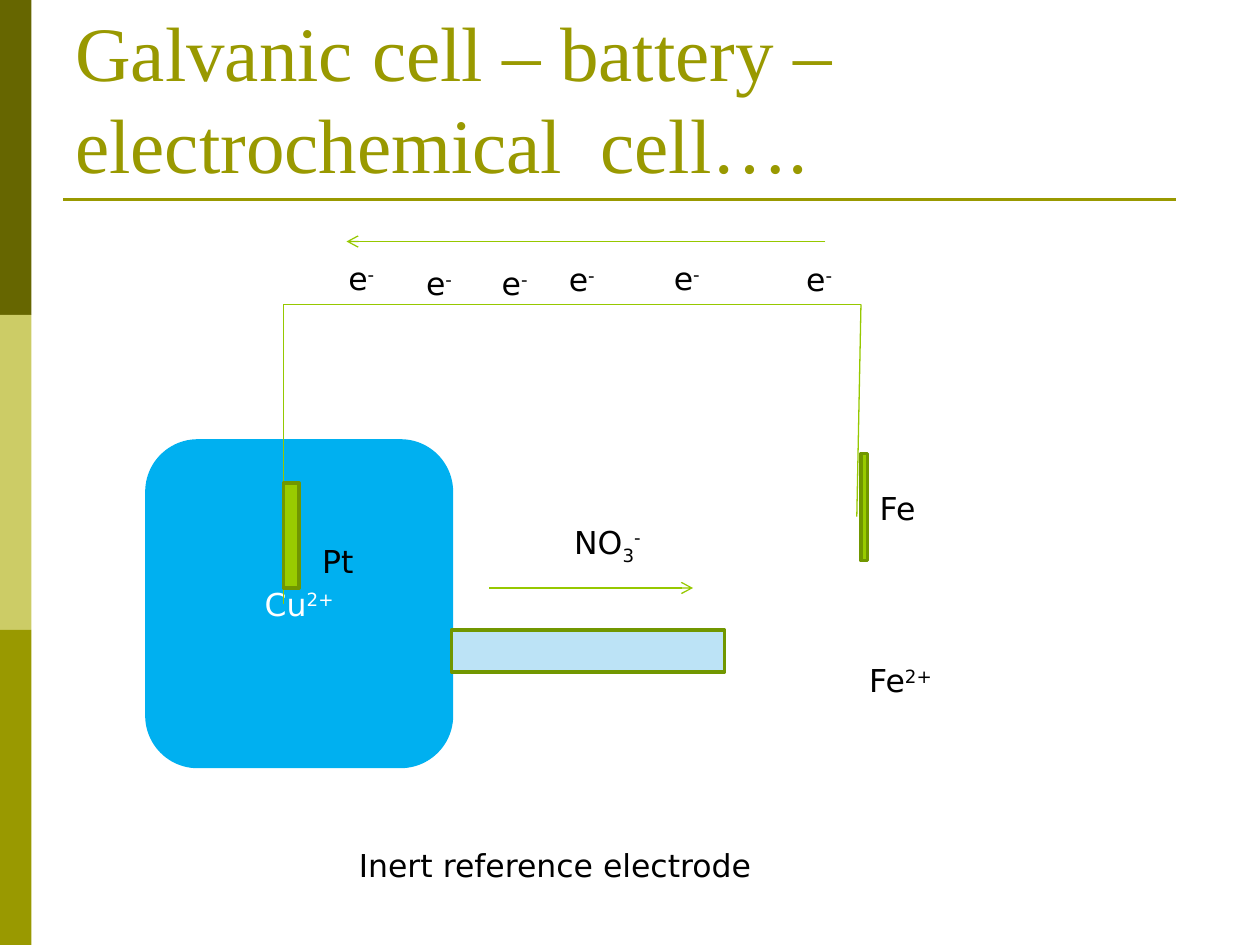
from itertools import pairwise

from lxml import etree
from pptx import Presentation
from pptx.dml.color import RGBColor
from pptx.enum.shapes import MSO_CONNECTOR, MSO_SHAPE
from pptx.enum.text import MSO_ANCHOR, MSO_AUTO_SIZE, PP_ALIGN
from pptx.oxml.ns import qn
from pptx.util import Inches, Pt

RECT, ROUNDED = MSO_SHAPE.RECTANGLE, MSO_SHAPE.ROUNDED_RECTANGLE
STRAIGHT = MSO_CONNECTOR.STRAIGHT
TOP, MIDDLE, BOTTOM = MSO_ANCHOR.TOP, MSO_ANCHOR.MIDDLE, MSO_ANCHOR.BOTTOM
GROW = MSO_AUTO_SIZE.SHAPE_TO_FIT_TEXT
LEFT, CENTER = PP_ALIGN.LEFT, PP_ALIGN.CENTER

WIDTH, HEIGHT = Inches(10), Inches(7.5)
COLUMNS = 120
CELL = WIDTH / COLUMNS
LABEL_ROWS = 4.8
BAND_COLUMNS, BAND_ROWS = 3, 30
SUPER, SUB = 30, -25
BODY_FONT, TITLE_FONT = "DejaVu Sans", "Times New Roman"

COLORS = {
    "dark olive": "666600", "pale olive": "CCCC66", "olive": "999900",
    "solution": "00B0F0", "bridge": "BCE3F6", "electrode": "99CC00",
    "outline": "719700", "wire": "96C800", "black": "000000", "white": "FFFFFF",
}

TITLE = [("Galvanic cell – battery – electrochemical  cell….", 0)]
TITLE_AREA = (6, 3.6, 108, 15)
TITLE_RULE = [(6, 19), (112, 19)]
BANDS = ["dark olive", "pale olive", "olive"]

BEAKER = (14, 42, 29, 31)
BEAKER_ION = [("Cu", 0), ("2+", SUPER)]
SALT_BRIDGE = (43, 60, 26, 4)
ELECTRODES = [(27, 46, 1.5, 10), (82, 43.2, 0.6, 10.2)]
CIRCUIT = [(27, 57.5), (27, 29), (82, 29), (81.6, 49.2)]
FLOW_ARROWS = [[(78.6, 23), (33, 23)], [(46.6, 56), (66, 56)]]

ELECTRON = [("e", 0), ("-", SUPER)]
ELECTRON_SPOTS = [(32, 24.1), (39.4, 24.6), (46.6, 24.6),
                  (53, 24.2), (63, 24.1), (75.6, 24.2)]
LABELS = [
    ((53.5, 49.2), 9.2, False, [("NO", 0), ("3", SUB), ("-", SUPER)]),
    ((29.5, 51), 5.4, False, [("Pt", 0)]),
    ((81.6, 62.4), 12, True, [("Fe", 0), ("2+", SUPER)]),
    ((82.6, 46), 5.9, False, [("Fe", 0)]),
    ((33, 80), 40.4, False, [("Inert reference electrode", 0)]),
] + [(spot, 6, True, ELECTRON) for spot in ELECTRON_SPOTS]


def cells(*counts):
    return [round(count * CELL) for count in counts]


def color(name):
    return RGBColor.from_string(COLORS[name])


def write(box, spans, ink, size=18, font=BODY_FONT, align=LEFT, anchor=TOP, wrap=True):
    frame = box.text_frame
    frame.word_wrap = wrap
    frame.vertical_anchor = anchor
    para = frame.paragraphs[0]
    para.alignment = align
    para.font.size, para.font.name = Pt(size), font
    para.font.color.rgb = color(ink)
    for text, shift in spans:
        span = para.add_run()
        span.text = text
        if shift:
            span._r.get_or_add_rPr().set("baseline", str(shift * 1000))


def add_block(page, area, fill, outline=None, kind=RECT):
    block = page.shapes.add_shape(kind, *cells(*area))
    block.shadow.inherit = False
    block.fill.solid()
    block.fill.fore_color.rgb = color(fill)
    if outline:
        block.line.color.rgb = color(outline)
        block.line.width = Pt(2)
    else:
        block.line.fill.background()
    return block


def add_line(page, start, end, ink="wire", width=0.75, arrow=False):
    line = page.shapes.add_connector(STRAIGHT, *cells(*start, *end))
    line.line.color.rgb = color(ink)
    line.line.width = Pt(width)
    properties = line._element.spPr
    if arrow:
        etree.SubElement(properties.find(qn("a:ln")), qn("a:tailEnd"), type="arrow")
    etree.SubElement(properties, qn("a:effectLst"))


def add_label(page, spot, width, wrap, spans):
    box = page.shapes.add_textbox(*cells(*spot, width, LABEL_ROWS))
    write(box, spans, "black", wrap=wrap)
    box.text_frame.auto_size = GROW


def main():
    """Build the galvanic cell slide."""
    deck = Presentation()
    deck.slide_width, deck.slide_height = WIDTH, HEIGHT
    page = deck.slides.add_slide(deck.slide_layouts[6])

    for index, fill in enumerate(BANDS):
        add_block(page, (0, index * BAND_ROWS, BAND_COLUMNS, BAND_ROWS), fill)
    add_line(page, *TITLE_RULE, ink="olive", width=1.5)
    title = page.shapes.add_textbox(*cells(*TITLE_AREA))
    write(title, TITLE, "olive", 44, TITLE_FONT, anchor=BOTTOM)

    beaker = add_block(page, BEAKER, "solution", "solution", ROUNDED)
    write(beaker, BEAKER_ION, "white", align=CENTER, anchor=MIDDLE)
    for start, end in pairwise(CIRCUIT):
        add_line(page, start, end)
    add_block(page, SALT_BRIDGE, "bridge", "outline")
    for area in ELECTRODES:
        add_block(page, area, "electrode", "outline")
    for label in LABELS:
        add_label(page, *label)
    for start, end in FLOW_ARROWS:
        add_line(page, start, end, arrow=True)

    deck.save("out.pptx")


if __name__ == "__main__":
    main()
